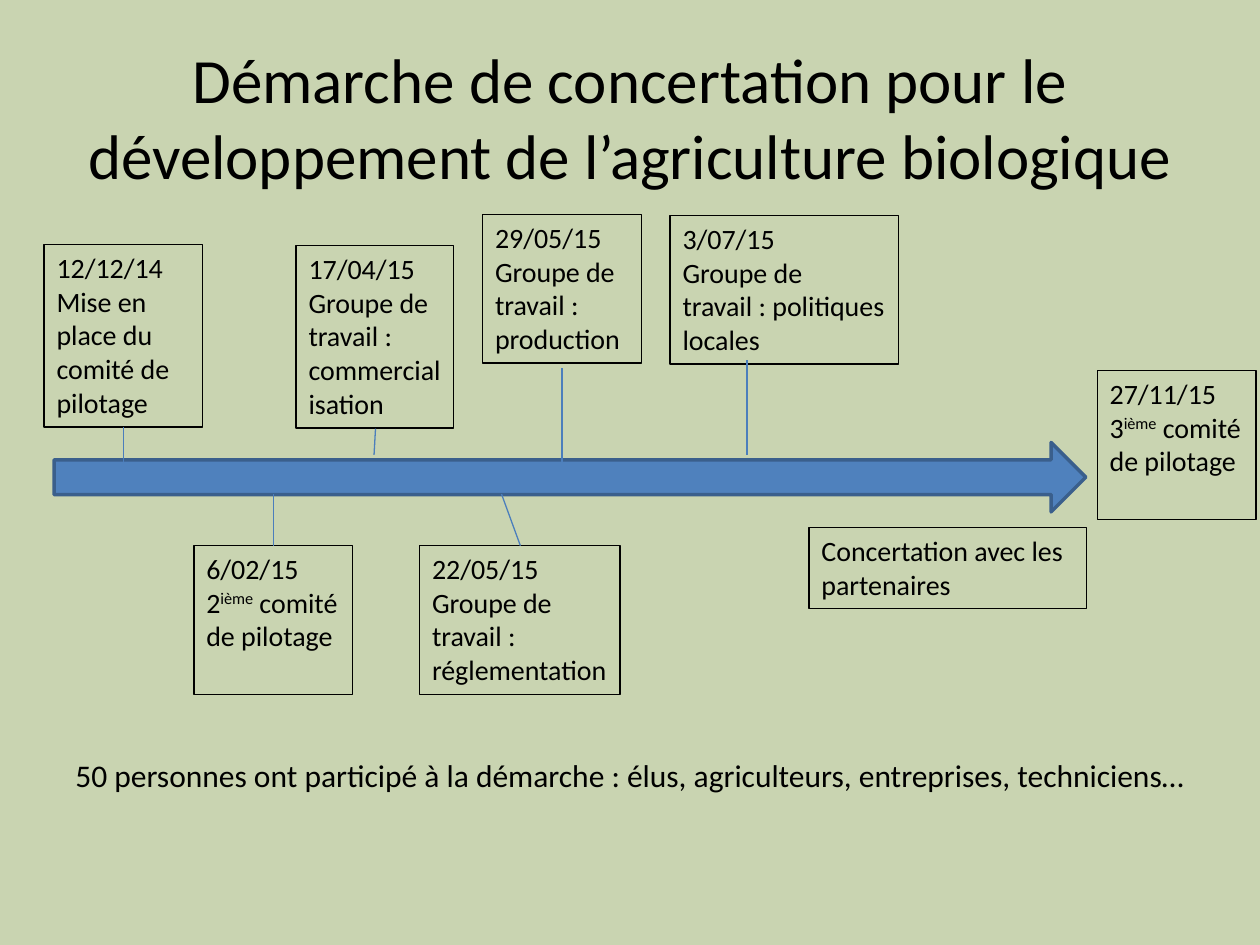
from dataclasses import dataclass

from lxml.etree import SubElement
from pptx import Presentation
from pptx.dml.color import RGBColor
from pptx.enum.shapes import MSO_CONNECTOR, MSO_SHAPE
from pptx.enum.text import MSO_ANCHOR, PP_ALIGN
from pptx.oxml.ns import qn
from pptx.util import Cm, Pt

COLOURS = {
    "background": "C9D4B1",
    "text": "000000",
    "arrow": "4F81BD",
    "arrow edge": "3A5F8C",
    "link": "4B7EBC",
}
FONT = "Calibri"


@dataclass(frozen=True)
class Span:
    text: str
    raised: bool = False


@dataclass(frozen=True)
class Area:
    """Place and size in centimetres."""
    left: float
    top: float
    width: float
    height: float

    def lengths(self) -> tuple:
        return Cm(self.left), Cm(self.top), Cm(self.width), Cm(self.height)


@dataclass(frozen=True)
class Step:
    area: Area
    paragraphs: tuple


@dataclass(frozen=True)
class Link:
    """Line from a start point to an end point, in centimetres."""
    start: tuple
    end: tuple


def committee(rank: str) -> tuple:
    return Span(rank), Span("ième", raised=True), Span(" comité de pilotage")


def workgroup(subject: str) -> tuple:
    return (Span(f"Groupe de travail : {subject}"),)


def dated(date: str, description: tuple) -> tuple:
    return (Span(date),), description


STEPS = [
    Step(Area(0.89, 4.93, 3.2, 3.68),
         dated("12/12/14", (Span("Mise en place du comité de pilotage"),))),
    Step(Area(3.91, 11, 3.2, 3), dated("6/02/15", committee("2"))),
    Step(Area(5.97, 4.95, 3.18, 3.68), dated("17/04/15", workgroup("commercialisation"))),
    Step(Area(8.46, 11, 4.04, 3), dated("22/05/15", workgroup("réglementation"))),
    Step(Area(9.73, 4.32, 3.2, 3), dated("29/05/15", workgroup("production"))),
    Step(Area(16.31, 10.64, 5.59, 1.63), ((Span("Concertation avec les partenaires"),),)),
    Step(Area(22.12, 7.47, 3.2, 3), dated("27/11/15", committee("3"))),
    Step(Area(13.51, 4.34, 4.6, 3), dated("3/07/15", workgroup("politiques locales"))),
]

LINKS = [
    Link((2.49, 8.61), (2.49, 9.32)),
    Link((10.11, 9.96), (10.49, 11)),
    Link((5.51, 9.96), (5.51, 11)),
    Link((7.57, 8.64), (7.54, 9.17)),
    Link((11.33, 7.42), (11.33, 9.32)),
    Link((15.06, 7.26), (15.06, 9.17)),
]


def colour(name: str) -> RGBColor:
    return RGBColor.from_string(COLOURS[name])


def set_line(shape, name: str, width: float) -> None:
    shape.line.color.rgb = colour(name)
    shape.line.width = Pt(width)


def add_text(page, area: Area, paragraphs: tuple, size: int):
    box = page.shapes.add_textbox(*area.lengths())
    frame = box.text_frame
    frame.word_wrap = True
    for index, spans in enumerate(paragraphs):
        paragraph = frame.add_paragraph() if index else frame.paragraphs[0]
        for span in spans:
            run = paragraph.add_run()
            run.text = span.text
            run.font.name = FONT
            run.font.size = Pt(size)
            run.font.color.rgb = colour("text")
            if span.raised:
                run._r.get_or_add_rPr().set("baseline", "30000")
    return box


def add_title(page) -> None:
    title = "Démarche de concertation pour le développement de l’agriculture biologique"
    box = add_text(page, Area(1.27, 0.76, 22.86, 3.18), ((Span(title),),), 36)
    box.text_frame.vertical_anchor = MSO_ANCHOR.MIDDLE
    box.text_frame.paragraphs[0].alignment = PP_ALIGN.CENTER


def add_time_arrow(page) -> None:
    arrow = page.shapes.add_shape(
        MSO_SHAPE.RIGHT_ARROW, *Area(1.09, 8.92, 20.8, 1.4).lengths())
    arrow.shadow.inherit = False
    arrow.fill.solid()
    arrow.fill.fore_color.rgb = colour("arrow")
    set_line(arrow, "arrow edge", 2)


def add_step(page, step: Step) -> None:
    box = add_text(page, step.area, step.paragraphs, 16)
    set_line(box, "text", 0.75)


def add_link(page, link: Link) -> None:
    points = [Cm(value) for value in link.start + link.end]
    connector = page.shapes.add_connector(MSO_CONNECTOR.STRAIGHT, *points)
    set_line(connector, "link", 0.75)
    SubElement(connector._element.spPr, qn("a:effectLst"))


def main() -> None:
    deck = Presentation()
    deck.slide_width, deck.slide_height = Cm(25.4), Cm(19.05)
    page = deck.slides.add_slide(deck.slide_layouts[6])
    page.background.fill.solid()
    page.background.fill.fore_color.rgb = colour("background")

    add_title(page)
    add_time_arrow(page)
    for step in STEPS:
        add_step(page, step)
    for link in LINKS:
        add_link(page, link)
    summary = ("50 personnes ont participé à la démarche : "
               "élus, agriculteurs, entreprises, techniciens…")
    add_text(page, Area(1.27, 15.11, 23.42, 1.02), ((Span(summary),),), 18)
    deck.save("out.pptx")


if __name__ == "__main__":
    main()
